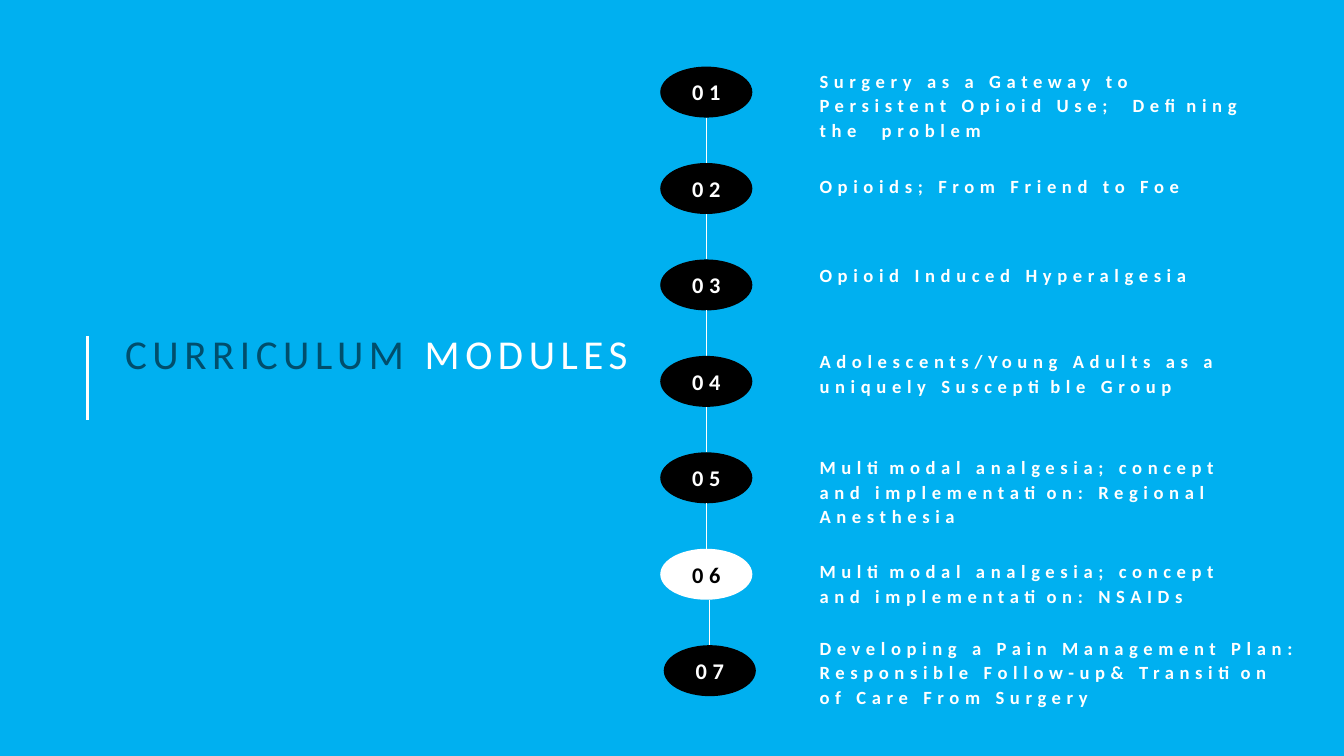
from lxml import etree
from pptx import Presentation
from pptx.dml.color import RGBColor
from pptx.enum import shapes, text
from pptx.oxml.ns import qn
from pptx.util import Pt

SKY = RGBColor(0x00, 0xB0, 0xF0)
NAVY = RGBColor(0x00, 0x4E, 0x6C)
WHITE = RGBColor(0xFF, 0xFF, 0xFF)
BLACK = RGBColor(0x00, 0x00, 0x00)

BADGE_LEFT, BADGE_TOP = 471.6, 47.6
BADGE_WIDTH, BADGE_HEIGHT = 65.8, 36.4
BADGE_PITCH = 68.88
LAST_SHIFT = 2.5
TOPIC_LEFT = 585.4
CURRENT_MODULE = 6

MODULES = [
    ("Surgery as a Gateway to Persistent Opioid Use;  Defining the  problem", 48.2, 312.5, 52),
    ("Opioids; From Friend to Foe", 123.1, 312.5, 17),
    ("Opioid Induced Hyperalgesia", 187.2, 312.5, 17),
    ("Adolescents/Young Adults as a uniquely Susceptible Group", 248.6, 330.5, 34),
    ("Multimodal analgesia; concept and implementation: Regional Anesthesia", 324.2, 312.5, 70),
    ("Multimodal analgesia; concept and implementation: NSAIDs", 398.4, 312.5, 52),
    ("Developing a Pain Management Plan: Responsible Follow-up& Transition of Care From Surgery",
     453, 348.5, 52),
]

FRAME_FORMAT = {
    "margin_left": 0, "margin_top": 0, "margin_right": 0, "margin_bottom": 0,
    "word_wrap": True, "auto_size": text.MSO_AUTO_SIZE.NONE,
}
TITLE_FONT = {"name": "Calibri", "size": Pt(29.3), "bold": False}
TOPIC_FONT = {"name": "Calibri", "size": Pt(13.3), "bold": True}
NUMBER_FONT = {"name": "Calibri", "size": Pt(16), "bold": True}


def apply_format(target, values):
    for name, value in values.items():
        setattr(target, name, value)


def format_frame(frame, anchor, alignment, line_spacing=1.0):
    apply_format(frame, {**FRAME_FORMAT, "vertical_anchor": anchor})
    paragraph = frame.paragraphs[0]
    apply_format(paragraph, {"alignment": alignment, "line_spacing": line_spacing})
    return paragraph


def add_spaced_run(paragraph, wording, font, color):
    run = paragraph.add_run()
    run.text = wording
    apply_format(run.font, font)
    run.font.color.rgb = color
    run._r.get_or_add_rPr().set("spc", "400")


def add_rule(slide, x, top, bottom, weight):
    rule = slide.shapes.add_connector(
        shapes.MSO_CONNECTOR.STRAIGHT, Pt(x), Pt(top), Pt(x), Pt(bottom))
    rule.line.color.rgb = WHITE
    rule.line.width = Pt(weight)
    etree.SubElement(rule._element.spPr, qn("a:effectLst"))


def add_heading(slide):
    heading = slide.shapes.title
    apply_format(heading, {"left": Pt(89.3), "top": Pt(234.7),
                           "width": Pt(380), "height": Pt(71.3)})
    paragraph = format_frame(heading.text_frame, text.MSO_ANCHOR.TOP, text.PP_ALIGN.LEFT)
    add_spaced_run(paragraph, "CURRICULUM ", TITLE_FONT, NAVY)
    add_spaced_run(paragraph, "MODULES", TITLE_FONT, WHITE)


def add_badge(slide, number, left, top):
    fill, ink = (WHITE, BLACK) if number == CURRENT_MODULE else (BLACK, WHITE)
    badge = slide.shapes.add_shape(
        shapes.MSO_SHAPE.OVAL, Pt(left), Pt(top), Pt(BADGE_WIDTH), Pt(BADGE_HEIGHT))
    badge.shadow.inherit = False
    badge.fill.solid()
    badge.fill.fore_color.rgb = fill
    badge.line.fill.background()
    paragraph = format_frame(badge.text_frame, text.MSO_ANCHOR.MIDDLE, text.PP_ALIGN.CENTER)
    add_spaced_run(paragraph, f"{number:02d}", NUMBER_FONT, ink)


def add_topic(slide, wording, top, width, height):
    topic = slide.shapes.add_textbox(Pt(TOPIC_LEFT), Pt(top), Pt(width), Pt(height))
    paragraph = format_frame(topic.text_frame, text.MSO_ANCHOR.TOP, text.PP_ALIGN.LEFT, 1.1)
    add_spaced_run(paragraph, wording, TOPIC_FONT, WHITE)


def main():
    deck = Presentation()
    apply_format(deck, {"slide_width": Pt(960), "slide_height": Pt(540)})
    slide = deck.slides.add_slide(deck.slide_layouts[5])
    slide.background.fill.solid()
    slide.background.fill.fore_color.rgb = SKY

    add_rule(slide, 62.6, 240, 300, 2.25)
    add_heading(slide)
    for number, (wording, topic_top, width, height) in enumerate(MODULES, 1):
        left = BADGE_LEFT + (LAST_SHIFT if number == len(MODULES) else 0)
        top = BADGE_TOP + (number - 1) * BADGE_PITCH
        if number > 1:
            add_rule(slide, left + BADGE_WIDTH / 2, top - BADGE_PITCH + BADGE_HEIGHT, top, 1)
        add_badge(slide, number, left, top)
        add_topic(slide, wording, topic_top, width, height)
    deck.save("out.pptx")


if __name__ == "__main__":
    main()
